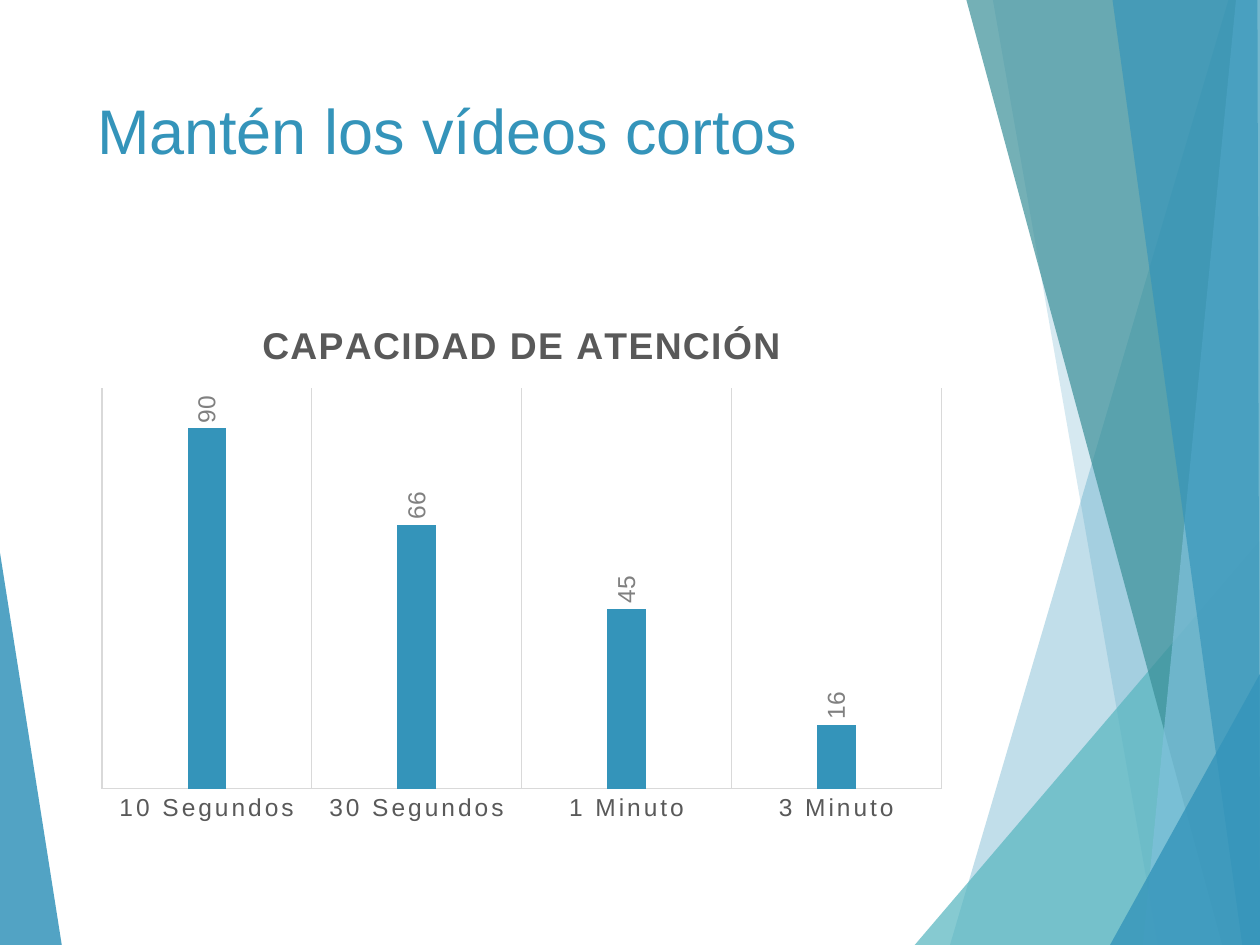
"""Builds a slide with a column chart on attention span and a faceted border."""
from pptx import Presentation
from pptx.chart.data import CategoryChartData as Data
from pptx.dml.color import RGBColor as RGB
from pptx.enum.chart import XL_CHART_TYPE as Kind, XL_LABEL_POSITION as Spot, XL_TICK_MARK as Tick
from pptx.enum.text import MSO_ANCHOR as Anchor, PP_ALIGN as Align
from pptx.oxml import parse_xml
from pptx.oxml.ns import nsdecls, qn
from pptx.util import Inches, Pt

HUES = {"blue": "3494BA", "aqua": "58B6C0", "teal": "3A8F98", "sky": "7FC1DB",
        "text": "595959", "label": "808080", "rule": "D9D9D9"}
FONT = "Arial"


def style(font, size, hue, bold=False):
    font.name, font.size, font.bold = FONT, Pt(size), bold
    font.color.rgb = RGB.from_string(HUES[hue])


def rule(line):
    line.color.rgb = RGB.from_string(HUES["rule"])
    line.width = Pt(0.75)


deck = Presentation()
deck.slide_width, deck.slide_height = Inches(10), Inches(7.5)
wide, high = deck.slide_width, deck.slide_height
slide = deck.slides.add_slide(deck.slide_layouts[5])
shapes = slide.shapes

facets = [
    ("blue", 85, [(0, 585), (49, 1000), (0, 1000)]),
    ("blue", 30, [(975, 0), (754, 1000), (1000, 1000), (1000, 0)]),
    ("blue", 20, [(788, 0), (919, 1000), (1000, 1000), (1000, 0)]),
    ("aqua", 72, [(726, 1000), (1000, 572), (1000, 1000)]),
    ("teal", 70, [(767, 0), (970, 1000), (1000, 1000), (1000, 0)]),
    ("sky", 70, [(981, 0), (907, 1000), (1000, 1000), (1000, 0)]),
    ("blue", 65, [(883, 0), (986, 1000), (1000, 1000), (998, 0)]),
    ("blue", 80, [(881, 1000), (1000, 713), (1000, 1000)]),
]
for hue, alpha, spots in facets:
    pen = shapes.build_freeform(*spots[0], scale=(wide / 1000, high / 1000))
    pen.add_line_segments(spots[1:], close=True)
    facet = pen.convert_to_shape()
    facet.shadow.inherit = False
    facet.line.fill.background()
    facet.fill.solid()
    facet.fill.fore_color.rgb = RGB.from_string(HUES[hue])
    tint = facet.element.spPr.find(qn("a:solidFill"))[0]
    tint.append(parse_xml(f'<a:alpha {nsdecls("a")} val="{alpha * 1000}"/>'))

left, span = int(wide * 0.067), int(wide * 0.694)
title = shapes.title
title.left, title.top, title.width, title.height = left, int(high * 0.09), span, int(high * 0.19)
frame = title.text_frame
frame.vertical_anchor, frame.word_wrap = Anchor.TOP, True
para = frame.paragraphs[0]
para.alignment = Align.LEFT
run = para.add_run()
run.text = "Mantén los vídeos cortos"
style(run.font, 36, "blue")
shapes.element.append(title.element)

data = Data()
data.categories = ["10 Segundos", "30 Segundos", "1 Minuto", "3 Minuto"]
data.add_series("Series 1", [90, 66, 45, 16])
chart = shapes.add_chart(Kind.COLUMN_CLUSTERED, left, int(high * 0.315), span, int(high * 0.565), data).chart
chart.has_legend = False
style(chart.font, 10, "text")

chart.has_title = True
run = chart.chart_title.text_frame.paragraphs[0].add_run()
run.text = "CAPACIDAD DE ATENCIÓN"
style(run.font, 21.3, "text", True)
run.font._element.set("spc", "100")
chart.chart_title.include_in_layout = False

cats = chart.category_axis
cats.major_tick_mark = cats.minor_tick_mark = Tick.NONE
cats.has_major_gridlines = True
rule(cats.major_gridlines.format.line)
rule(cats.format.line)
style(cats.tick_labels.font, 14, "text")
cats.tick_labels.font._element.set("spc", "160")

vals = chart.value_axis
vals.minimum_scale, vals.maximum_scale = 0, 100
vals.has_major_gridlines = False
vals.visible = False

plot = chart.plots[0]
plot.gap_width, plot.overlap, plot.vary_by_categories = 444, -90, False
bars = plot.series[0]
bars.format.fill.solid()
bars.format.fill.fore_color.rgb = RGB.from_string(HUES["blue"])
tags = bars.data_labels
tags.show_value, tags.position = True, Spot.OUTSIDE_END
style(tags.font, 14, "label")
turn = tags._element.find(qn("c:txPr")).find(qn("a:bodyPr"))
turn.set("rot", "-5400000")
turn.set("vert", "horz")

area = chart._chartSpace.chart.plotArea
for old in area.findall(qn("c:layout")):
    area.remove(old)
box = {"x": 0.02, "y": 0.17, "w": 0.96, "h": 0.75}
sizes = "".join(f'<c:{key} val="{share}"/>' for key, share in box.items())
area.insert(0, parse_xml(
    f'<c:layout {nsdecls("c")}><c:manualLayout><c:layoutTarget val="inner"/>'
    f'<c:xMode val="edge"/><c:yMode val="edge"/>{sizes}</c:manualLayout></c:layout>'))

deck.save("out.pptx")
